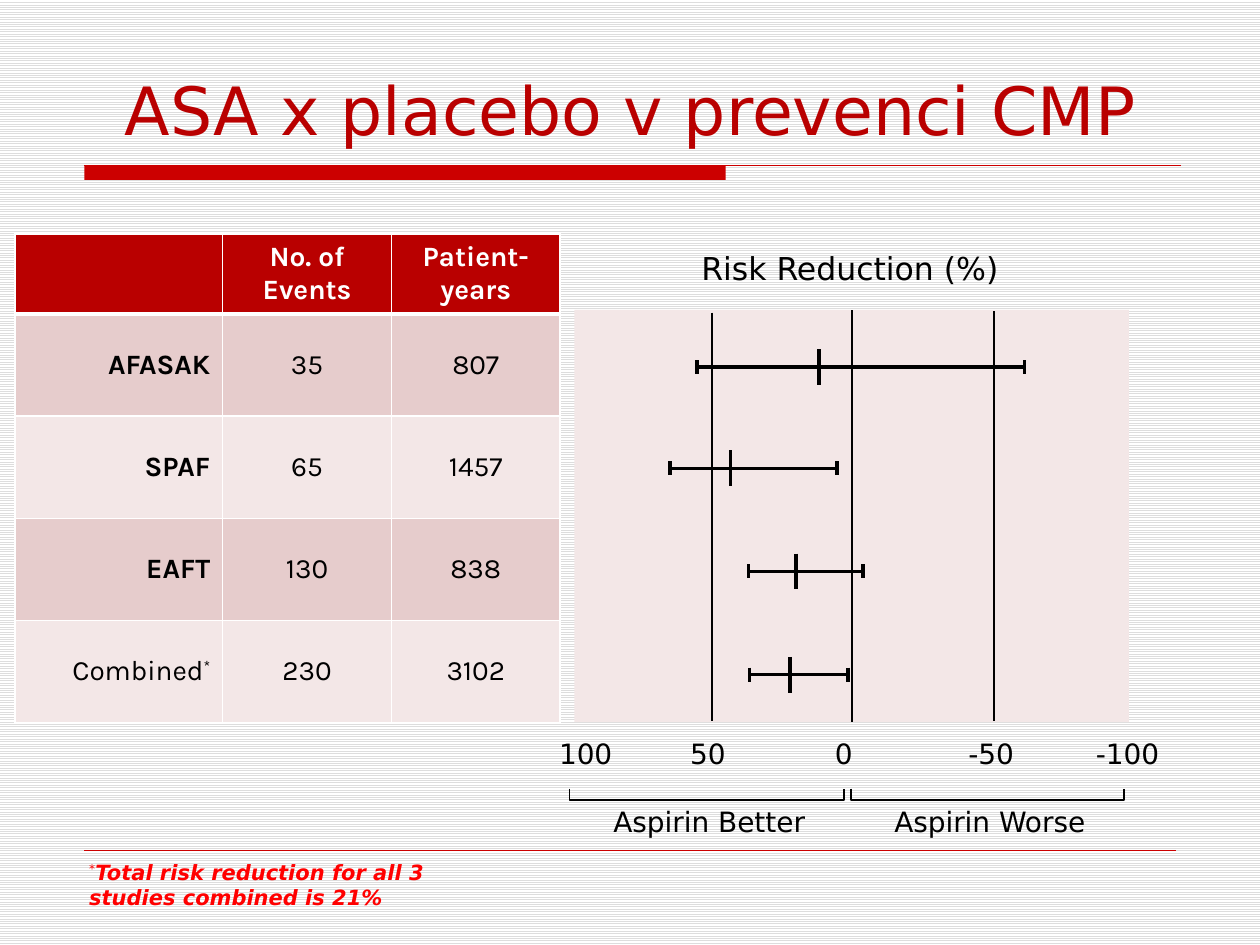
from lxml.etree import SubElement
from pptx import Presentation
from pptx.dml.color import RGBColor
from pptx.enum.dml import MSO_PATTERN
from pptx.enum.shapes import MSO_CONNECTOR, MSO_SHAPE
from pptx.enum.text import MSO_ANCHOR, PP_ALIGN
from pptx.oxml.ns import qn
from pptx.util import Cm, Pt

RED = RGBColor(0xCC, 0x00, 0x00)
DARK = RGBColor(0xB9, 0x00, 0x00)
NOTE = RGBColor(0xFF, 0x00, 0x00)
ROSE = RGBColor(0xE6, 0xCC, 0xCC)
PALE = RGBColor(0xF3, 0xE7, 0xE7)
GREY = RGBColor(0xDD, 0xDD, 0xDD)
WHITE = RGBColor(0xFF, 0xFF, 0xFF)
BLACK = RGBColor(0x00, 0x00, 0x00)

SANS = {"name": "DejaVu Sans", "size": Pt(16), "bold": False}


def line(x1, y1, x2, y2, width, color=BLACK):
    rule = slide.shapes.add_connector(
        MSO_CONNECTOR.STRAIGHT, Cm(x1), Cm(y1), Cm(x2), Cm(y2))
    rule.line.color.rgb = color
    rule.line.width = Pt(width)
    SubElement(rule._element.spPr, qn("a:effectLst"))
    return rule


def write(frame, text, align, color, form):
    """Fill a text frame; each asterisk becomes a plain superscript."""
    for i, row in enumerate(text.split("\n")):
        para = frame.paragraphs[0] if i == 0 else frame.add_paragraph()
        para.alignment = align
        for part in row.replace("*", "|*|").split("|"):
            if not part:
                continue
            run = para.add_run()
            run.text = part
            for key, value in form.items():
                setattr(run.font, key, value)
            run.font.color.rgb = color
            if part == "*":
                run.font.bold = False
                run.font._element.set("baseline", "30000")


deck = Presentation()
deck.slide_width, deck.slide_height = Cm(25.4), Cm(19.05)
slide = deck.slides.add_slide(deck.slide_layouts[5])

# Striped background
back = slide.background.fill
back.patterned()
back.pattern = MSO_PATTERN.LIGHT_HORIZONTAL
back.fore_color.rgb = GREY
back.back_color.rgb = WHITE

# Title with its bar, and the footer rule
title = slide.shapes.title
title.left, title.top = Cm(1.6), Cm(0.84)
title.width, title.height = Cm(22.23), Cm(2.29)
title.text_frame.vertical_anchor = MSO_ANCHOR.BOTTOM
write(title.text_frame, "ASA x placebo v prevenci CMP", PP_ALIGN.CENTER,
      DARK, SANS | {"size": Pt(38)})
bar = slide.shapes.add_shape(
    MSO_SHAPE.RECTANGLE, Cm(1.7), Cm(3.33), Cm(12.93), Cm(0.3))
panel = slide.shapes.add_shape(
    MSO_SHAPE.RECTANGLE, Cm(11.58), Cm(6.25), Cm(11.18), Cm(8.31))
for shape, color in ((bar, RED), (panel, PALE)):
    shape.shadow.inherit = False
    shape.fill.solid()
    shape.fill.fore_color.rgb = color
    shape.line.fill.background()
line(1.7, 3.33, 23.8, 3.33, 0.75, RED)
line(1.7, 17.15, 23.7, 17.15, 0.25, RED)

# Grid lines of the forest plot
line(14.35, 6.3, 14.35, 14.53, 1)
line(20.04, 6.27, 20.04, 14.53, 1)
zero = line(17.15, 6.25, 17.15, 14.56, 1)
zero.begin_connect(panel, 0)
zero.end_connect(panel, 2)

# Interval of each study: height, left end, estimate, right end
for y, low, mid, high in (
    (7.4, 14.05, 16.51, 20.65),
    (9.44, 13.51, 14.73, 16.87),
    (11.52, 15.09, 16.05, 17.4),
    (13.6, 15.11, 15.93, 17.09),
):
    line(low, y, high, y, 2)
    for x, half in ((low, 0.14), (mid, 0.36), (high, 0.14)):
        line(x, y - half, x, y + half, 2)

# Brackets under the axis
for left, right in ((11.48, 17.02), (17.15, 22.66)):
    path = slide.shapes.build_freeform(Cm(left), Cm(15.9))
    path.add_line_segments(
        [(Cm(left), Cm(16.13)), (Cm(right), Cm(16.13)),
         (Cm(right), Cm(15.9))], close=False)
    hook = path.convert_to_shape()
    hook.shadow.inherit = False
    hook.fill.background()
    hook.line.color.rgb = BLACK
    hook.line.width = Pt(1)

# Plot labels
for text, x, y, w, h, size in (
    ("Risk Reduction (%)", 13.77, 4.9, 6.73, 1.02, 18),
    ("Aspirin Better", 12.09, 16.1, 4.42, 0.94, 16),
    ("Aspirin Worse", 17.73, 16.1, 4.45, 0.94, 16),
):
    box = slide.shapes.add_textbox(Cm(x), Cm(y), Cm(w), Cm(h))
    box.text_frame.word_wrap = False
    write(box.text_frame, text, PP_ALIGN.CENTER, BLACK,
          SANS | {"size": Pt(size)})

# Axis values on centred tabs
axis = slide.shapes.add_textbox(Cm(11.02), Cm(14.73), Cm(12.75), Cm(0.94))
axis.text_frame.word_wrap = False
props = axis.text_frame.paragraphs[0]._p.get_or_add_pPr()
tabs = SubElement(props, qn("a:tabLst"))
for stop in (3, 5.74, 8.71, 11.46):
    SubElement(tabs, qn("a:tab"), pos=str(Cm(stop)), algn="ctr")
write(axis.text_frame, "100\t50\t0\t-50\t-100", PP_ALIGN.LEFT, BLACK, SANS)

# Footnote
note = slide.shapes.add_textbox(Cm(1.7), Cm(17.32), Cm(8), Cm(1.4))
frame = note.text_frame
frame.word_wrap = True
frame.margin_left = frame.margin_right = Cm(0.1)
frame.margin_top = frame.margin_bottom = 0
write(frame, "*Total risk reduction for all 3 studies combined is 21%",
      PP_ALIGN.LEFT, NOTE,
      SANS | {"size": Pt(12), "bold": True, "italic": True})

# Table of studies
rows = (
    ("", "No. of\nEvents", "Patient-\nyears"),
    ("AFASAK", "35", "807"),
    ("SPAF", "65", "1457"),
    ("EAFT", "130", "838"),
    ("Combined*", "230", "3102"),
)
table = slide.shapes.add_table(
    5, 3, Cm(0.3), Cm(4.72), Cm(10.99), Cm(9.84)).table
for col, width in zip(table.columns, (4.19, 3.4, 3.4)):
    col.width = Cm(width)
for r, row in enumerate(rows):
    table.rows[r].height = Cm(2.06 if r else 1.6)
    for c, text in enumerate(row):
        cell = table.cell(r, c)
        cell.vertical_anchor = MSO_ANCHOR.MIDDLE
        for side in "LRTB":
            thick = (r, side) in ((0, "B"), (1, "T"))
            edge = SubElement(cell._tc.get_or_add_tcPr(),
                              qn(f"a:ln{side}"), w=str(Pt(3 if thick else 1)))
            fill = SubElement(edge, qn("a:solidFill"))
            SubElement(fill, qn("a:srgbClr"), val=str(WHITE))
        cell.fill.solid()
        cell.fill.fore_color.rgb = (ROSE if r % 2 else PALE) if r else DARK
        bold = r == 0 or (c == 0 and r < 4)
        write(cell.text_frame, text,
              PP_ALIGN.RIGHT if r and c == 0 else PP_ALIGN.CENTER,
              BLACK if r else WHITE,
              {"name": "Karla", "size": Pt(16), "bold": bold})

deck.save("out.pptx")
